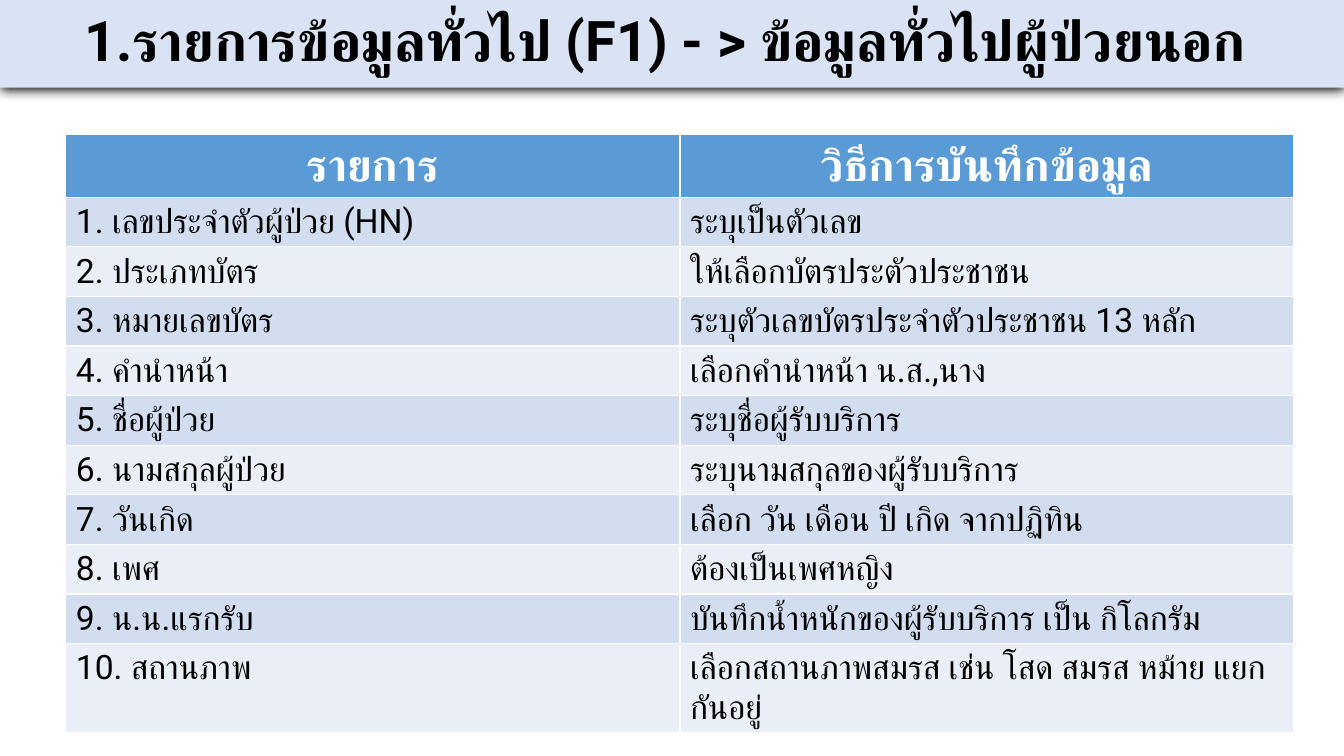
"""Build a slide with a title band and a table of patient data fields."""
from lxml.etree import SubElement as Sub
from pptx import Presentation
from pptx.dml.color import RGBColor
from pptx.enum.shapes import MSO_SHAPE as Kind
from pptx.enum.text import MSO_ANCHOR as Anchor, PP_ALIGN as Align
from pptx.oxml.ns import qn
from pptx.util import Cm, Pt


def paint(fill, color):
    fill.solid()
    fill.fore_color.rgb = RGBColor.from_string(color)


def write(para, text, size, color, bold):
    run = para.add_run()
    run.text = text
    font = run.font
    font.size, font.bold, font.name = Pt(size), bold, "Roboto"
    paint(font.fill, color)
    Sub(font._element, qn("a:cs"), typeface="Roboto")


deck = Presentation()
deck.slide_width, deck.slide_height = Cm(33.87), Cm(19.05)
slide = deck.slides.add_slide(deck.slide_layouts[6])

band = slide.shapes.add_shape(Kind.RECTANGLE, 0, 0, Cm(33.87), Cm(2.21))
paint(band.fill, "DAE3F3")
band.line.fill.background()
band.shadow.inherit = False
glow = band._element.spPr.find(qn("a:effectLst"))
shade = Sub(glow, qn("a:outerShdw"), blurRad=str(Pt(8.5)), dist=str(Pt(1)),
            dir="5400000", algn="t", rotWithShape="0")
Sub(shade, qn("a:srgbClr"), val="000000")
frame = band.text_frame
frame.word_wrap = True
frame.vertical_anchor = Anchor.MIDDLE
title = frame.paragraphs[0]
title.alignment = Align.CENTER
title.line_spacing = 0.9
write(title, "1.รายการข้อมูลทั่วไป (F1) - > ข้อมูลทั่วไปผู้ป่วยนอก ", 40, "000000", True)

rows = [
    ("รายการ", "วิธีการบันทึกข้อมูล"),
    ("1. เลขประจำตัวผู้ป่วย (HN)", "ระบุเป็นตัวเลข"),
    ("2. ประเภทบัตร", "ให้เลือกบัตรประตัวประชาชน"),
    ("3. หมายเลขบัตร", "ระบุตัวเลขบัตรประจำตัวประชาชน 13 หลัก"),
    ("4. คำนำหน้า", "เลือกคำนำหน้า น.ส.,นาง"),
    ("5. ชื่อผู้ป่วย", "ระบุชื่อผู้รับบริการ"),
    ("6. นามสกุลผู้ป่วย", "ระบุนามสกุลของผู้รับบริการ"),
    ("7. วันเกิด", "เลือก วัน เดือน ปี เกิด จากปฏิทิน"),
    ("8. เพศ", "ต้องเป็นเพศหญิง"),
    ("9. น.น.แรกรับ", "บันทึกน้ำหนักของผู้รับบริการ เป็น กิโลกรัม"),
    ("10. สถานภาพ", "เลือกสถานภาพสมรส เช่น โสด สมรส หม้าย แยกกันอยู่"),
]
highs = [1.32] + [1.25] * 9 + [1.97]
table = slide.shapes.add_table(len(rows), 2, Cm(1.66), Cm(3.39),
                               Cm(30.95), Cm(sum(highs))).table
for r, (texts, high) in enumerate(zip(rows, highs)):
    table.rows[r].height = Cm(high)
    head = r == 0
    back = "5B9BD5" if head else ("EAEFF7", "D2DEEF")[r % 2]
    for c, text in enumerate(texts):
        cell = table.cell(r, c)
        paint(cell.fill, back)
        para = cell.text_frame.paragraphs[0]
        para.alignment = Align.CENTER if head else Align.LEFT
        write(para, text, 32 if head else 24, "FFFFFF" if head else "000000", head)

deck.save("out.pptx")
